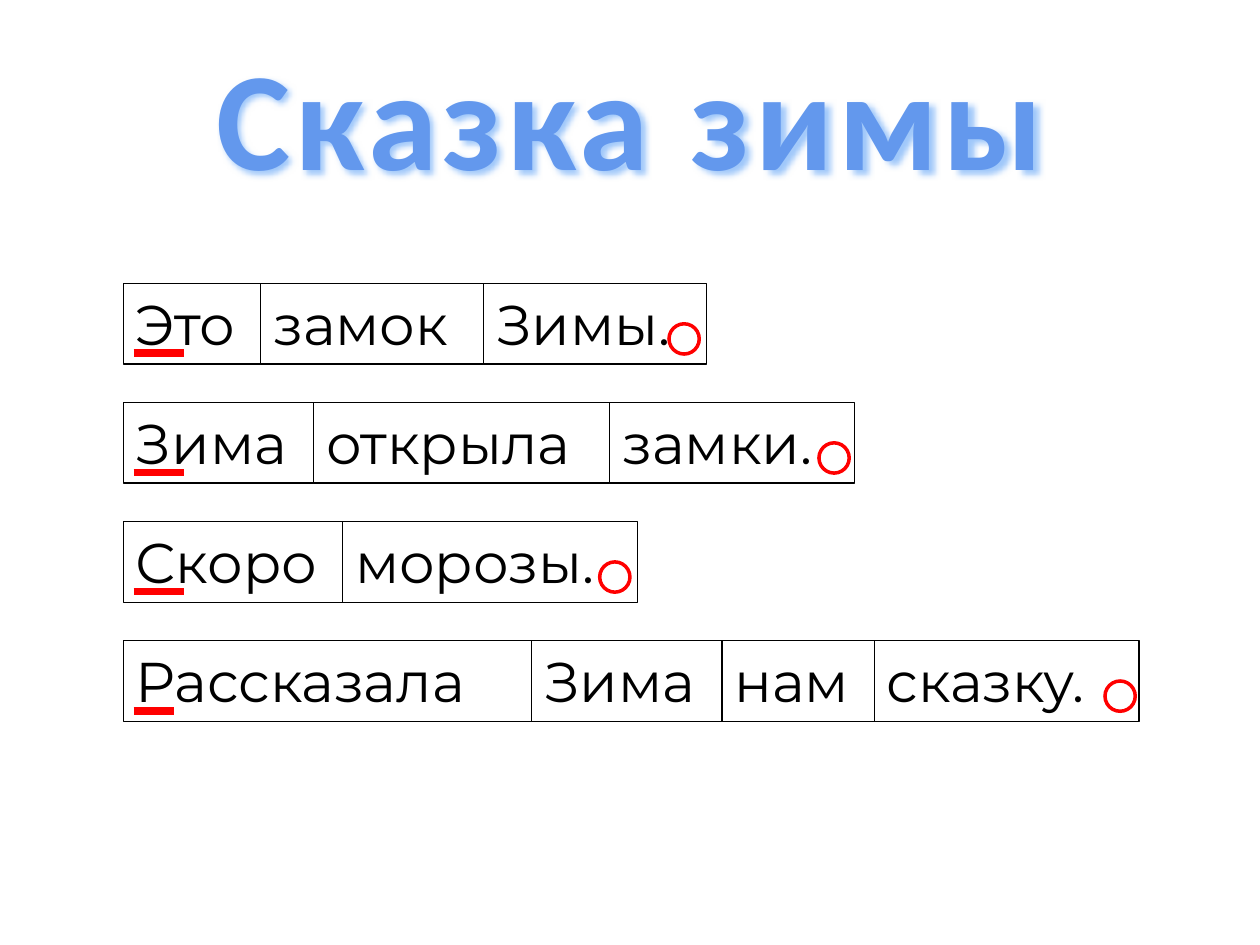
"""Build a slide of four sentences split into word boxes with punctuation marks."""
from dataclasses import dataclass

import lxml.etree
import pptx
import pptx.dml.color
import pptx.enum.shapes
import pptx.enum.text
import pptx.oxml
import pptx.oxml.ns
import pptx.util

Inches = pptx.util.Inches
Pt = pptx.util.Pt
SHAPE = pptx.enum.shapes.MSO_SHAPE
COLORS = {"title": "6398ED", "glow": "A0C8FA", "text": "000000", "mark": "FF0000"}
TITLE_FONT = {"name": "Calibri", "size": Pt(80), "bold": True}
WORD_FONT = {"name": "Montserrat", "size": Pt(32), "bold": False}
LEFT, TOP, PITCH, BOX_HEIGHT = 0.98, 2.25, 0.945, 0.64


@dataclass
class Sentence:
    words: list[tuple[str, float]]
    underline: float
    circle_left: float


SENTENCES = [
    Sentence([("Это", 1.09), ("замок", 1.77), ("Зимы.", 1.77)], 0.4, 5.31),
    Sentence([("Зима", 1.51), ("открыла", 2.35), ("замки.", 1.94)], 0.4, 6.5),
    Sentence([("Скоро", 1.74), ("морозы.", 2.34)], 0.4, 4.76),
    Sentence([("Рассказала", 3.24), ("Зима", 1.51), ("нам", 1.21), ("сказку.", 2.1)], 0.32, 8.77),
]


def rgb(name: str) -> pptx.dml.color.RGBColor:
    return pptx.dml.color.RGBColor.from_string(COLORS[name])


def write(sp, text: str, font: dict, color: str, align):
    p = sp.text_frame.paragraphs[0]
    p.alignment = align
    r = p.add_run()
    r.text = text
    for key, value in font.items():
        setattr(r.font, key, value)
    r.font.color.rgb = rgb(color)
    return r


def add_title(slide, text: str) -> None:
    sp = slide.shapes.title
    sp.left, sp.top, sp.width, sp.height = map(Inches, (1.56, 0.18, 6.89, 1.45))
    sp.text_frame.word_wrap = False
    r = write(sp, text, TITLE_FONT, "title", pptx.enum.text.PP_ALIGN.CENTER)
    r.font._element.set("spc", "300")
    effects = pptx.oxml.parse_xml(
        f'<a:effectLst {pptx.oxml.ns.nsdecls("a")}>'
        '<a:outerShdw blurRad="38100" dist="31750" dir="2700000" algn="tl" rotWithShape="0">'
        f'<a:srgbClr val="{COLORS["glow"]}"/></a:outerShdw></a:effectLst>')
    sp._element.spPr.append(effects)


def add_outline(slide, kind, left: float, top: float, width: float, height: float,
                color: str, weight: float):
    sp = slide.shapes.add_shape(kind, *map(Inches, (left, top, width, height)))
    sp.shadow.inherit = False
    sp.fill.background()
    sp.line.color.rgb = rgb(color)
    sp.line.width = Pt(weight)
    return sp


def add_word(slide, text: str, left: float, top: float, width: float) -> None:
    sp = add_outline(slide, SHAPE.RECTANGLE, left, top, width, BOX_HEIGHT, "text", 0.75)
    sp.text_frame.word_wrap = True
    sp.text_frame.vertical_anchor = pptx.enum.text.MSO_ANCHOR.TOP
    write(sp, text, WORD_FONT, "text", pptx.enum.text.PP_ALIGN.LEFT)


def add_underline(slide, left: float, top: float, width: float) -> None:
    line = slide.shapes.add_connector(
        pptx.enum.shapes.MSO_CONNECTOR.STRAIGHT,
        *map(Inches, (left, top, left + width, top)))
    line.line.color.rgb = rgb("mark")
    line.line.width = Pt(4.5)
    lxml.etree.SubElement(line._element.spPr, pptx.oxml.ns.qn("a:effectLst"))


def add_sentence(slide, sentence: Sentence, top: float) -> None:
    left = LEFT
    for text, width in sentence.words:
        add_word(slide, text, left, top, width)
        left += width
    add_underline(slide, LEFT + 0.08, top + 0.555, sentence.underline)
    add_outline(slide, SHAPE.OVAL, sentence.circle_left, top + 0.32, 0.24, 0.24, "mark", 2)


def main() -> None:
    prs = pptx.Presentation()
    prs.slide_width, prs.slide_height = Inches(10), Inches(7.5)
    slide = prs.slides.add_slide(prs.slide_layouts[5])
    add_title(slide, "Сказка зимы")
    for i, sentence in enumerate(SENTENCES):
        add_sentence(slide, sentence, TOP + i * PITCH)
    prs.save("out.pptx")


if __name__ == "__main__":
    main()
